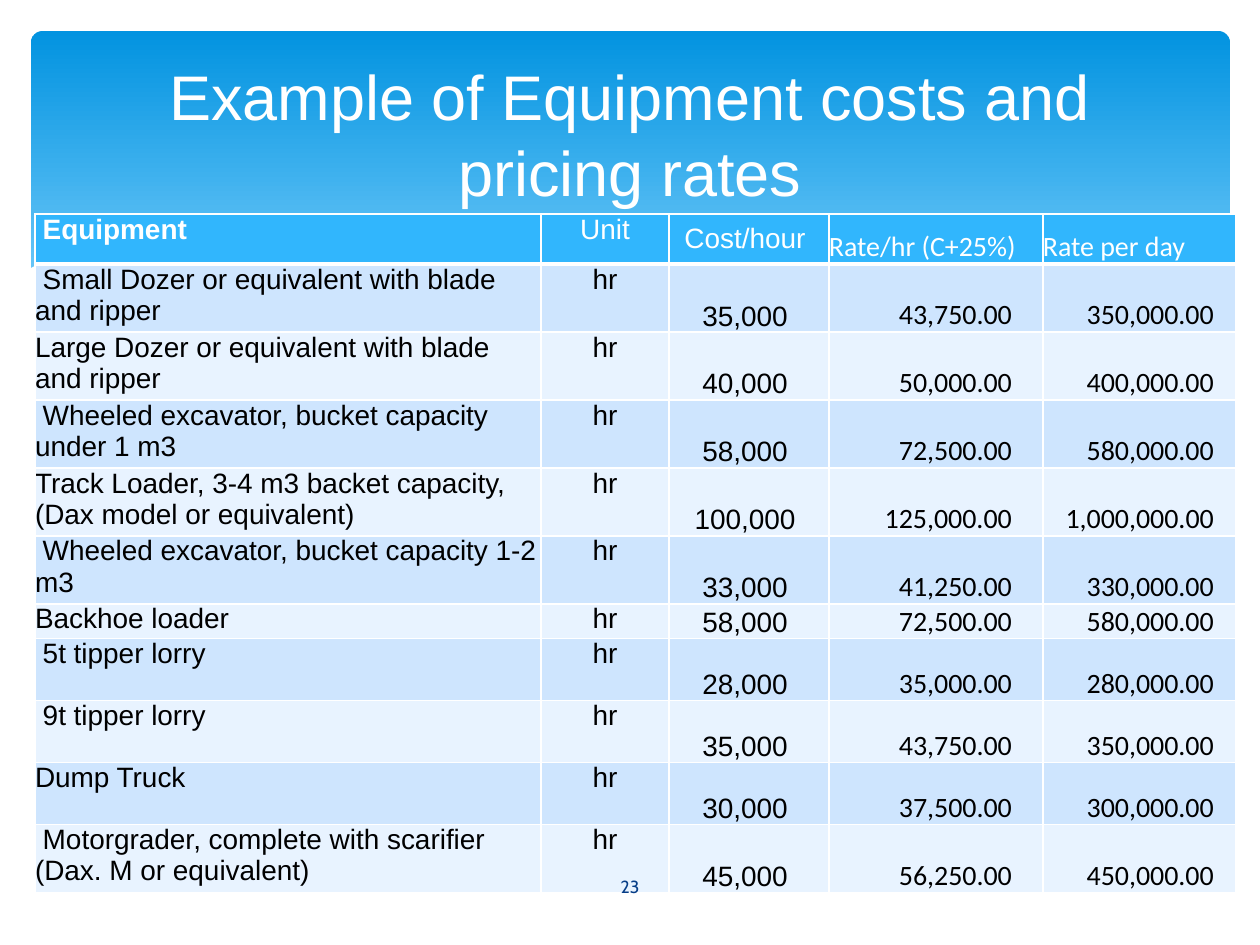
from lxml.etree import SubElement
from pptx import Presentation
from pptx.dml.color import RGBColor
from pptx.enum.shapes import MSO_SHAPE as SHAPE
from pptx.enum.text import MSO_ANCHOR as ANCHOR, PP_ALIGN as ALIGN
from pptx.oxml.ns import qn
from pptx.util import Emu, Pt

WHITE, BLACK, BLUE = "FFFFFF", "000000", "31B6FD"
BANDS = ["CEE5FE", "E8F3FF"]
HEADERS = [" Equipment", "Unit", "Cost/hour", "Rate/hr (C+25%)", "Rate per day"]
EQUIPMENT = [
    (" Small Dozer or equivalent with blade and ripper", 35000, 68),
    ("Large Dozer or equivalent with blade and ripper", 40000, 68),
    (" Wheeled excavator, bucket capacity under 1 m3", 58000, 68),
    ("Track Loader, 3-4 m3 backet capacity, (Dax model or equivalent)", 100000, 68),
    (" Wheeled excavator, bucket capacity 1-2 m3", 33000, 68),
    ("Backhoe loader", 58000, 35),
    (" 5t tipper lorry", 28000, 62),
    (" 9t tipper lorry", 35000, 62),
    ("Dump Truck", 30000, 62),
    (" Motorgrader, complete with scarifier (Dax. M or equivalent)", 45000, 68),
]
COL_WIDTHS = [506, 128, 160, 214, 193]
HEADER_HEIGHT = 50
FONTS = ["Arial"] * 3 + ["Calibri"] * 2
HEADER_ALIGNS = [ALIGN.LEFT, ALIGN.CENTER, ALIGN.CENTER, ALIGN.LEFT, ALIGN.LEFT]
HEADER_ANCHORS = [ANCHOR.TOP, ANCHOR.TOP, ANCHOR.MIDDLE, ANCHOR.BOTTOM, ANCHOR.BOTTOM]
BODY_ALIGNS = [ALIGN.LEFT, ALIGN.CENTER, ALIGN.CENTER, ALIGN.RIGHT, ALIGN.RIGHT]
BODY_ANCHORS = [ANCHOR.TOP] * 2 + [ANCHOR.BOTTOM] * 3
RIGHT_INSETS = [0, 0, 8, 31, 22]
WAVE = [(0, 37), (20, 27), (58, 14), (105, 5), (174, 0), (260, 1), (360, 10),
        (470, 27), (534, 45), (637, 70), (760, 94), (895, 111), (990, 117),
        (1076, 112), (1143, 99), (1202, 78), (1202, 183), (0, 183)]


def px(n):
    """Turn px at 126 to the inch into EMU."""
    return Emu(round(n * 914400 / 126))


def rgb(color):
    """Turn a hex string into a colour."""
    return RGBColor.from_string(color)


def format_text(tf, size, font, color, align, anchor, bold=False):
    """Format every run of a text frame."""
    tf.word_wrap = True
    tf.vertical_anchor = anchor
    for p in tf.paragraphs:
        p.alignment = align
        for r in p.runs:
            r.font.size, r.font.name, r.font.bold = Pt(size), font, bold
            r.font.color.rgb = rgb(color)


def add_banner(s, x, y, w, h):
    """Add the gradient card and the white wave across its lower part."""
    card = s.shapes.add_shape(SHAPE.ROUNDED_RECTANGLE, px(x), px(y), px(w), px(h))
    card.adjustments[0] = 0.034
    card.fill.gradient()
    card.fill.gradient_angle = 270
    for stop, (pos, color) in zip(card.fill.gradient_stops, [(0, "0293E0"), (0.9, "83D3FE")]):
        stop.position = pos
        stop.color.rgb = rgb(color)
    points = [(px(x - 2 + dx), px(y + 201 + dy)) for dx, dy in WAVE]
    builder = s.shapes.build_freeform(*points[0])
    builder.add_line_segments(points[1:])
    wave = builder.convert_to_shape()
    wave.fill.solid()
    wave.fill.fore_color.rgb = rgb(WHITE)
    for sp in (card, wave):
        sp.line.fill.background()
        sp.shadow.inherit = False


def set_borders(cell, widths):
    """Draw white borders, given widths in points by side tag."""
    tc_pr = cell._tc.get_or_add_tcPr()
    for i, (side, width) in enumerate(widths.items()):
        ln = tc_pr.makeelement(qn(f"a:{side}"), {"w": str(Pt(width))})
        SubElement(SubElement(ln, qn("a:solidFill")), qn("a:srgbClr"), val=WHITE)
        tc_pr.insert(i, ln)


def fill_cell(cell, text, fill, color, font, align, anchor, inset=0, bold=False, top=1, bottom=1):
    """Write and format one table cell."""
    cell.text = text
    cell.margin_left = cell.margin_top = cell.margin_bottom = 0
    cell.margin_right = px(inset)
    format_text(cell.text_frame, 16, font, color, align, anchor, bold)
    cell.vertical_anchor = anchor
    cell.fill.solid()
    cell.fill.fore_color.rgb = rgb(fill)
    set_borders(cell, {"lnL": 1, "lnR": 1, "lnT": top, "lnB": bottom})


def add_cost_table(s, x, y):
    """Add the equipment table; rates are cost plus 25%, a day is 8 hours."""
    heights = [HEADER_HEIGHT] + [h for _, _, h in EQUIPMENT]
    table = s.shapes.add_table(len(heights), len(COL_WIDTHS), px(x), px(y),
                               px(sum(COL_WIDTHS)), px(sum(heights))).table
    table.first_row = table.horz_banding = False
    for col, w in zip(table.columns, COL_WIDTHS):
        col.width = px(w)
    for row, h in zip(table.rows, heights):
        row.height = px(h)
    for j, text in enumerate(HEADERS):
        fill_cell(table.cell(0, j), text, BLUE, WHITE, FONTS[j], HEADER_ALIGNS[j],
                  HEADER_ANCHORS[j], 8 if j == 2 else 0, bold=j == 0, bottom=3)
    for i, (name, cost, _) in enumerate(EQUIPMENT):
        rate = cost * 1.25
        texts = [name, "hr", f"{cost:,}", f"{rate:,.2f}", f"{rate * 8:,.2f}"]
        for j, text in enumerate(texts):
            fill_cell(table.cell(i + 1, j), text, BANDS[i % 2], BLACK, FONTS[j], BODY_ALIGNS[j],
                      BODY_ANCHORS[j], RIGHT_INSETS[j], top=1 if i else 3)


def add_slide_number(s, x, y, w, h):
    """Add the slide number."""
    tf = s.shapes.add_textbox(px(x), px(y), px(w), px(h)).text_frame
    tf.text = "23"
    format_text(tf, 10, "Cabin", "073E87", ALIGN.CENTER, ANCHOR.MIDDLE)


def place_title(s, x, y, w, h):
    """Fill the title placeholder and bring it to the front."""
    title = s.shapes.title
    title.left, title.top, title.width, title.height = px(x), px(y), px(w), px(h)
    title.text_frame.text = "Example of Equipment costs and pricing rates"
    format_text(title.text_frame, 36, "Arial", WHITE, ALIGN.CENTER, ANCHOR.MIDDLE)
    title.element.getparent().append(title.element)


def main():
    """Build the slide and save it."""
    prs = Presentation()
    prs.slide_width, prs.slide_height = px(1260), px(945)
    s = prs.slides.add_slide(prs.slide_layouts[5])
    add_banner(s, 31, 31, 1199, 340)
    add_cost_table(s, 35, 214)
    add_slide_number(s, 550, 862, 160, 50)
    place_title(s, 63, 47, 1134, 173)
    prs.save("out.pptx")


if __name__ == "__main__":
    main()
